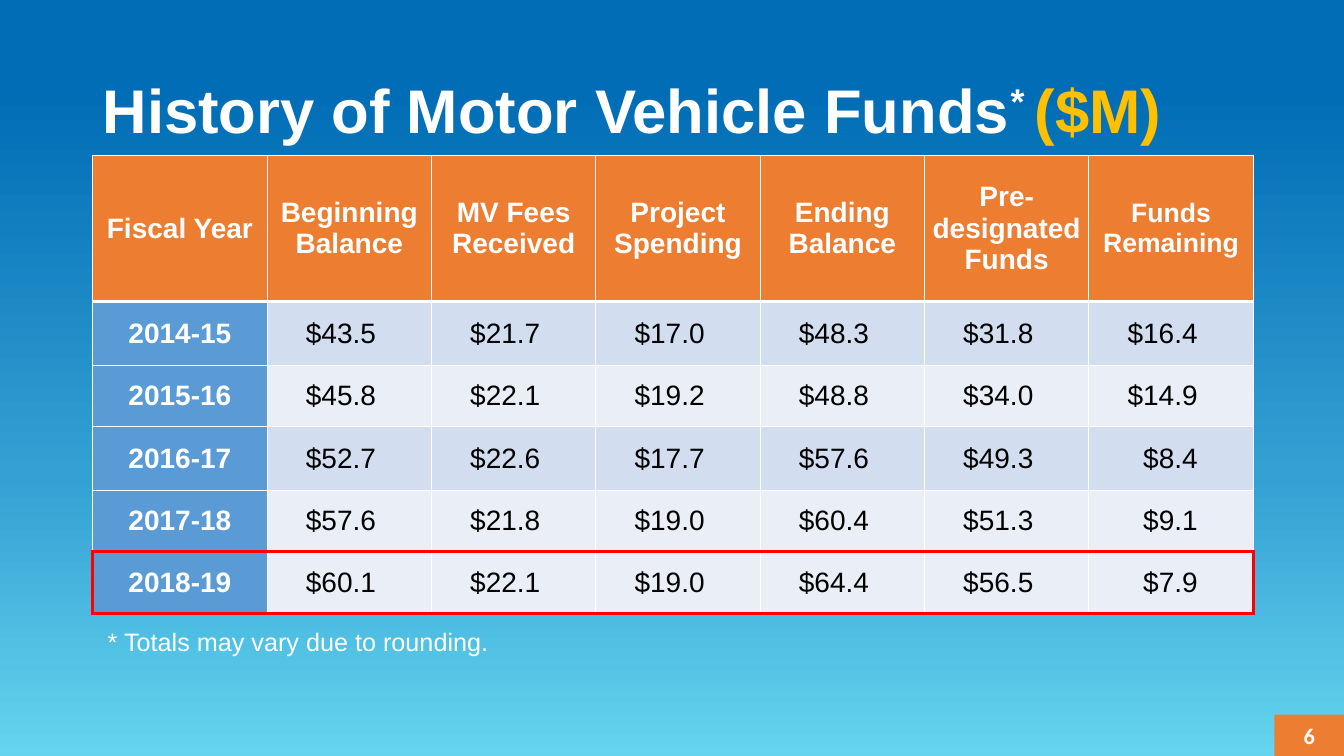
from pptx import Presentation, oxml
from pptx.dml.color import RGBColor
from pptx.enum import shapes, text
from pptx.oxml import ns
from pptx.util import Inches, Pt

HUE = {"white": "FFFFFF", "black": "000000", "gold": "FFC000", "red": "FF0000",
       "orange": "ED7D31", "blue": "5B9BD5", "dark": "D2DEEF", "light": "EAEFF7",
       "top": "006DB6", "mid": "33A1D3", "base": "64D4EF"}
HEADS = ["Fiscal Year", "Beginning\nBalance", "MV Fees\nReceived", "Project\nSpending",
         "Ending\nBalance", "Pre-designated\nFunds", "Funds\nRemaining"]
FUNDS = [
    ["2014-15", "$43.5", "$21.7", "$17.0", "$48.3", "$31.8", "$16.4"],
    ["2015-16", "$45.8", "$22.1", "$19.2", "$48.8", "$34.0", "$14.9"],
    ["2016-17", "$52.7", "$22.6", "$17.7", "$57.6", "$49.3", "$8.4"],
    ["2017-18", "$57.6", "$21.8", "$19.0", "$60.4", "$51.3", "$9.1"],
    ["2018-19", "$60.1", "$22.1", "$19.0", "$64.4", "$56.5", "$7.9"],
]
COLS = [1.73] + [1.63] * 6
ROWS = [1.45, 0.64, 0.6, 0.64, 0.6, 0.62]
ALIGN = text.PP_ALIGN
MIDDLE = text.MSO_ANCHOR.MIDDLE


def xml(body):
    head, rest = body.split(" ", 1)
    return oxml.parse_xml(f"{head} {ns.nsdecls('a')} {rest}")


def write(par, words, size=20, color="white", bold=False, font="Arial",
          align=None, rise=0, shade=False):
    """Add text to a paragraph; a newline becomes a line break."""
    if align is not None:
        par.alignment = align
    for i, line in enumerate(words.split("\n")):
        if i:
            par.add_line_break()
        run = par.add_run()
        run.text = line
        run.font.size, run.font.bold, run.font.name = Pt(size), bold, font
        run.font.color.rgb = RGBColor.from_string(HUE[color])
        props = run.font._element
        if rise:
            props.set("baseline", str(rise * 1000))
        if shade:
            props.find(ns.qn("a:solidFill")).addnext(xml(
                '<a:effectLst ><a:outerShdw blurRad="38100" dist="38100" dir="2700000" algn="tl">'
                '<a:srgbClr val="000000"><a:alpha val="43000"/></a:srgbClr>'
                '</a:outerShdw></a:effectLst>'))


def paint(fill, color):
    fill.solid()
    fill.fore_color.rgb = RGBColor.from_string(HUE[color])


def backdrop(slide):
    slide.background.fill.solid()
    props = slide._element.find(".//" + ns.qn("p:bgPr"))
    stops = "".join(f'<a:gs pos="{pos * 1000}"><a:srgbClr val="{HUE[name]}"/></a:gs>'
                    for pos, name in ((0, "base"), (37, "mid"), (88, "top")))
    props.replace(props[0], xml(
        f'<a:gradFill rotWithShape="1"><a:gsLst>{stops}</a:gsLst>'
        '<a:lin ang="16200000" scaled="0"/></a:gradFill>'))


def heading(slide, x, y, w, h):
    frame = slide.shapes.add_textbox(*map(Inches, (x, y, w, h))).text_frame
    frame.word_wrap, frame.vertical_anchor = True, MIDDLE
    par = frame.paragraphs[0]
    par.line_spacing = 0.9
    look = dict(size=44, bold=True, shade=True)
    write(par, "History of Motor Vehicle Funds", **look)
    write(par, "* ", rise=30, **look)
    write(par, "($M)", color="gold", **look)


def edges(cell, r, c):
    """White grid, thick rule under the header, red frame on the last row."""
    end, last = len(ROWS) - 1, len(COLS) - 1
    thin, thick, frame = ("white", 1), ("white", 3), ("red", 2.25)
    sides = {
        "L": frame if r == end and c == 0 else thin,
        "R": frame if r == end and c == last else thin,
        "T": frame if r == end else thick if r == 1 else thin,
        "B": frame if r >= end - 1 else thick if r == 0 else thin,
    }
    props = cell._tc.get_or_add_tcPr()
    for i, (side, (color, width)) in enumerate(sides.items()):
        props.insert(i, xml(
            f'<a:ln{side} w="{Pt(width)}"><a:solidFill><a:srgbClr val="{HUE[color]}"/>'
            f'</a:solidFill></a:ln{side}>'))


def ledger(slide, x, y):
    table = slide.shapes.add_table(
        len(ROWS), len(COLS), Inches(x), Inches(y),
        Inches(sum(COLS)), Inches(sum(ROWS))).table
    for col, width in zip(table.columns, COLS):
        col.width = Inches(width)
    for row, height in zip(table.rows, ROWS):
        row.height = Inches(height)
    for r, row in enumerate([HEADS] + FUNDS):
        for c, words in enumerate(row):
            cell = table.cell(r, c)
            label = r == 0 or c == 0
            cell.vertical_anchor = MIDDLE
            cell.margin_top = cell.margin_bottom = 0
            cell.margin_left = Inches(0.07)
            cell.margin_right = Inches(0.07 if label else 0.55)
            band = "dark" if r in (1, 3) else "light"
            paint(cell.fill, "orange" if r == 0 else "blue" if c == 0 else band)
            edges(cell, r, c)
            write(cell.text_frame.paragraphs[0], words, bold=label,
                  size=19 if words == HEADS[-1] else 20,
                  color="white" if label else "black",
                  align=ALIGN.CENTER if label else ALIGN.RIGHT)


def footnote(slide, x, y, w, h):
    frame = slide.shapes.add_textbox(*map(Inches, (x, y, w, h))).text_frame
    frame.word_wrap = False
    frame.auto_size = text.MSO_AUTO_SIZE.SHAPE_TO_FIT_TEXT
    write(frame.paragraphs[0], "* Totals may vary due to rounding.", size=18)


def folio(slide, x, y, w, h):
    tab = slide.shapes.add_shape(shapes.MSO_SHAPE.RECTANGLE, *map(Inches, (x, y, w, h)))
    tab.shadow.inherit = False
    paint(tab.fill, "orange")
    tab.line.fill.background()
    tab.text_frame.vertical_anchor = MIDDLE
    write(tab.text_frame.paragraphs[0], "6", size=16, bold=True,
          font="Calibri", align=ALIGN.CENTER)


def main():
    deck = Presentation()
    deck.slide_width, deck.slide_height = Inches(13.33), Inches(7.5)
    slide = deck.slides.add_slide(deck.slide_layouts[6])
    backdrop(slide)
    heading(slide, 0.92, 0.4, 11.5, 1.45)
    ledger(slide, 0.92, 1.54)
    folio(slide, 12.64, 7.09, 0.69, 0.41)
    footnote(slide, 0.97, 6.16, 4.01, 0.4)
    deck.save("out.pptx")


if __name__ == "__main__":
    main()
